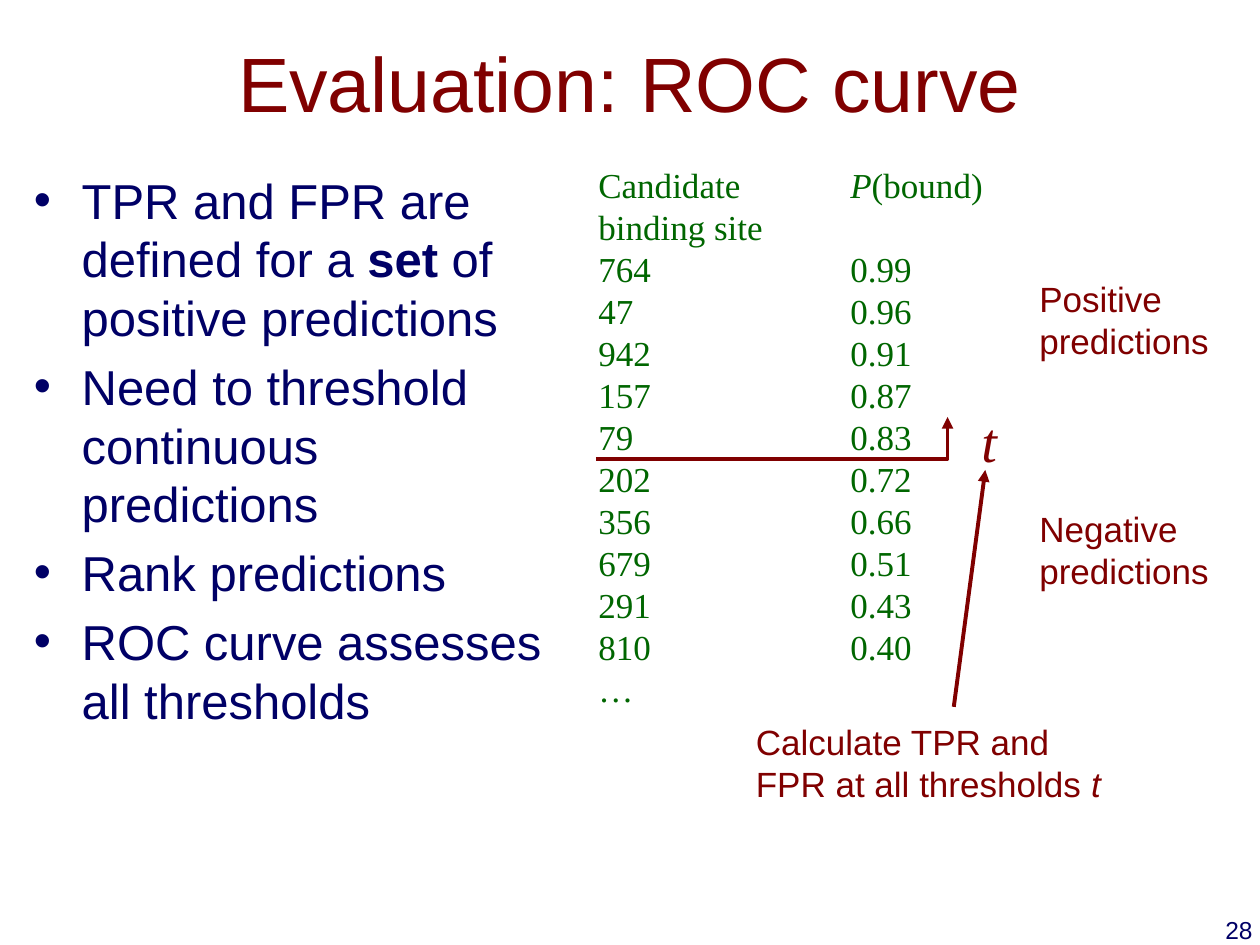
from lxml import etree
from pptx import Presentation
from pptx import util as u
from pptx.dml.color import RGBColor
from pptx.enum import shapes, text
from pptx.oxml.ns import qn

MAROON = RGBColor(0x80, 0x00, 0x00)
NAVY = RGBColor(0x00, 0x00, 0x66)
GREEN = RGBColor(0x00, 0x66, 0x00)
SANS, SERIF = "Arial", "Times New Roman"

BULLETS = [
    [("TPR and FPR are defined for a ", ""), ("set", "b"), (" of positive predictions", "")],
    [("Need to threshold continuous predictions", "")],
    [("Rank predictions", "")],
    [("ROC curve assesses all thresholds", "")],
]
RANKING = [
    (764, 0.99), (47, 0.96), (942, 0.91), (157, 0.87), (79, 0.83),
    (202, 0.72), (356, 0.66), (679, 0.51), (291, 0.43), (810, 0.40),
]


class SlideBuilder:
    line_width = u.Pt(2.25)
    line_color = MAROON

    def __init__(self, presentation):
        self.slide = presentation.slides.add_slide(presentation.slide_layouts[5])

    def fill_text(self, frame, paragraphs, size, color, font=SANS, align=text.PP_ALIGN.LEFT):
        """Write paragraphs, each a list of (words, style) with style "", "b" or "i"."""
        for index, pieces in enumerate(paragraphs):
            paragraph = frame.add_paragraph() if index else frame.paragraphs[0]
            paragraph.alignment = align
            for words, style in pieces:
                run = paragraph.add_run()
                run.text = words
                run.font.size = u.Pt(size)
                run.font.name = font
                run.font.color.rgb = color
                run.font.bold = style == "b"
                run.font.italic = style == "i"

    def title(self, words, left, top, width, height):
        shape = self.slide.shapes.title
        shape.left, shape.top = u.Inches(left), u.Inches(top)
        shape.width, shape.height = u.Inches(width), u.Inches(height)
        shape.text_frame.vertical_anchor = text.MSO_ANCHOR.MIDDLE
        self.fill_text(shape.text_frame, [[(words, "")]], 44, MAROON,
                       align=text.PP_ALIGN.CENTER)

    def text_box(self, paragraphs, left, top, width, height, size, color, wrap=True, **style):
        box = self.slide.shapes.add_textbox(
            u.Inches(left), u.Inches(top), u.Inches(width), u.Inches(height))
        box.text_frame.word_wrap = wrap
        self.fill_text(box.text_frame, paragraphs, size, color, **style)
        return box.text_frame

    def bullets(self, paragraphs, left, top, width, height, size, color):
        frame = self.text_box(paragraphs, left, top, width, height, size, color)
        indent = u.Inches(0.38)
        for paragraph in frame.paragraphs:
            paragraph.space_before = u.Pt(size * 0.2)
            properties = paragraph._p.get_or_add_pPr()
            properties.set("marL", str(indent))
            properties.set("indent", str(-indent))
            etree.SubElement(properties, qn("a:buFont"), typeface=SANS)
            etree.SubElement(properties, qn("a:buChar"), char="•")

    def tabbed_list(self, paragraphs, tab, left, top, width, height, size, color):
        frame = self.text_box(paragraphs, left, top, width, height, size, color, font=SERIF)
        for paragraph in frame.paragraphs:
            tabs = etree.SubElement(paragraph._p.get_or_add_pPr(), qn("a:tabLst"))
            etree.SubElement(tabs, qn("a:tab"), pos=str(u.Inches(tab)), algn="l")

    def style_arrow(self, shape):
        shape.line.color.rgb = self.line_color
        shape.line.width = self.line_width
        etree.SubElement(shape.line._get_or_add_ln(), qn("a:tailEnd"), type="triangle")

    def arrow(self, start, end):
        connector = self.slide.shapes.add_connector(
            shapes.MSO_CONNECTOR.STRAIGHT, *map(u.Inches, start + end))
        self.style_arrow(connector)
        etree.SubElement(connector._element.spPr, qn("a:effectLst"))

    def bent_arrow(self, *points):
        start, *rest = [tuple(map(u.Inches, point)) for point in points]
        builder = self.slide.shapes.build_freeform(*start)
        builder.add_line_segments(rest, close=False)
        shape = builder.convert_to_shape()
        shape.fill.background()
        shape.shadow.inherit = False
        self.style_arrow(shape)


def main():
    presentation = Presentation()
    presentation.slide_width, presentation.slide_height = u.Inches(10), u.Inches(7.5)
    builder = SlideBuilder(presentation)

    builder.title("Evaluation: ROC curve", 0.75, 0.02, 8.5, 1.25)
    builder.text_box([[("28", "")]], 7.96, 7.21, 2.08, 0.5, 14, NAVY,
                     align=text.PP_ALIGN.RIGHT)
    builder.bullets(BULLETS, 0.17, 1.3, 4.25, 5.79, 28, NAVY)

    rows = [[("Candidate\t", ""), ("P", "i"), ("(bound)", "")], [("binding site", "")]]
    rows += [[(f"{site}\t{probability:.2f}", "")] for site, probability in RANKING]
    rows.append([("…", "")])
    builder.tabbed_list(rows, 2, 4.65, 1.25, 4.92, 4.48, 20, GREEN)

    builder.bent_arrow((4.73, 3.64), (7.52, 3.64), (7.52, 3.31))
    builder.text_box([[("t", "i")]], 7.69, 3.18, 0.33, 0.64, 32, MAROON,
                     wrap=False, font=SERIF)
    builder.text_box([[("Calculate TPR and FPR at all thresholds ", ""), ("t", "i")]],
                     5.9, 5.67, 3.02, 0.77, 20, MAROON)
    builder.arrow((7.57, 5.61), (7.82, 3.73))
    for outcome, top in (("Positive", 2.15), ("Negative", 3.98)):
        builder.text_box([[(f"{outcome} predictions", "")]], 8.15, top, 1.85, 0.77, 20, MAROON)

    presentation.save("out.pptx")


if __name__ == "__main__":
    main()
